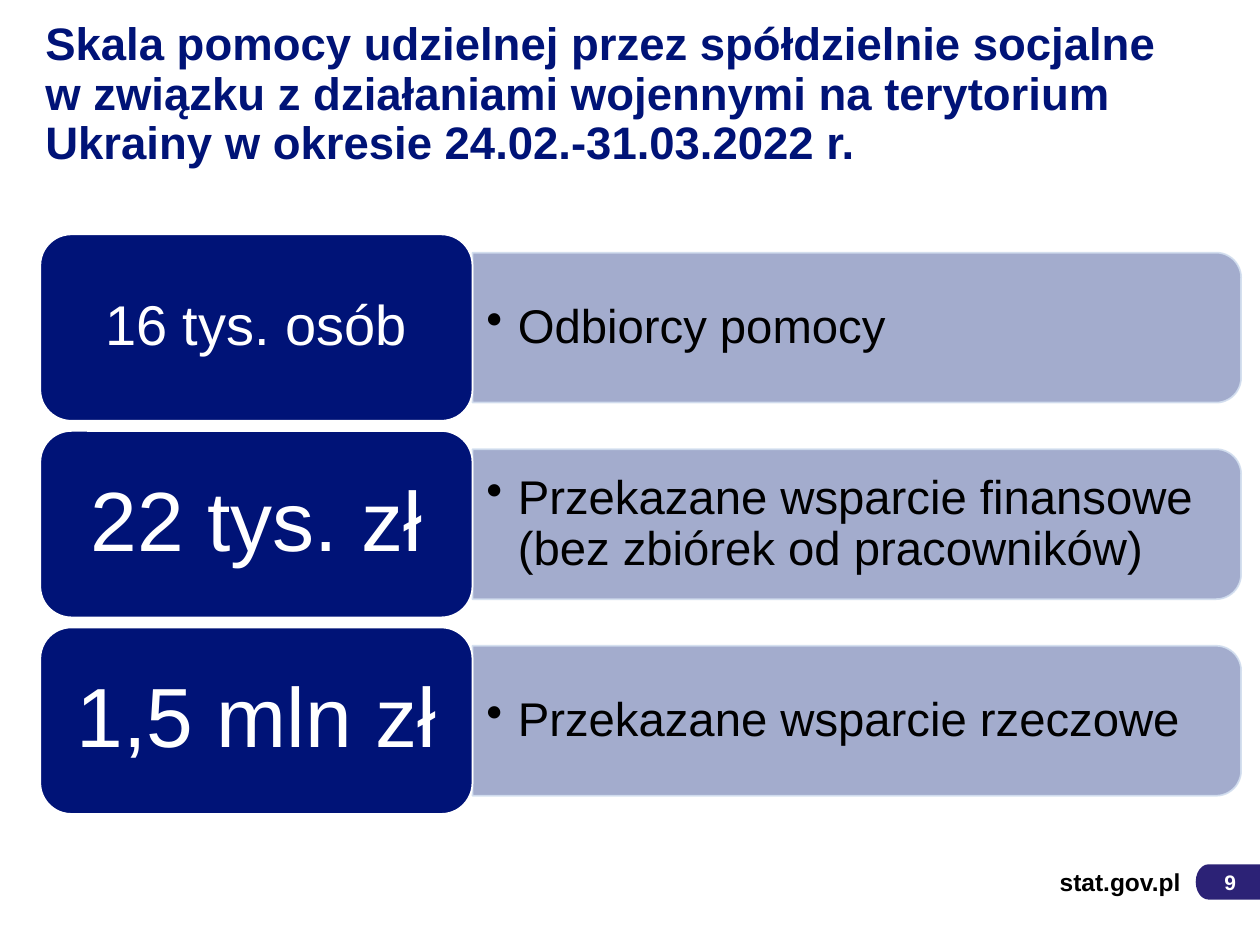
from dataclasses import dataclass

from lxml import etree
from pptx import Presentation
from pptx import util as u
from pptx.dml.color import RGBColor
from pptx.enum import shapes, text
from pptx.oxml.ns import qn

COLORS = {
    "navy": "001377",
    "bar": "99A4C8",
    "bar_line": "D2DEEF",
    "badge": "2C2276",
    "white": "FFFFFF",
    "black": "000000",
}
FONT = "Arial"
ROW_TOP, ROW_PITCH = 1.86, 1.56
LABEL_LEFT, LABEL_WIDTH, LABEL_HEIGHT = 0.32, 3.43, 1.48
BAR_LENGTH, BAR_HEIGHT = 6.1, 1.19


@dataclass
class Row:
    amount: str
    size: int
    inset: float
    description: str


ROWS = [
    Row("16 tys. osób", 32, 0.13, "Odbiorcy pomocy"),
    Row("22 tys. zł", 48, 0.2, "Przekazane wsparcie finansowe (bez zbiórek od pracowników)"),
    Row("1,5 mln zł", 48, 0.2, "Przekazane wsparcie rzeczowe"),
]


def rgb(name: str) -> RGBColor:
    return RGBColor.from_string(COLORS[name])


def add_shape(page, kind, left: float, top: float, width: float, height: float,
              fill: str, line: str | None = None):
    shape = page.shapes.add_shape(
        kind, u.Inches(left), u.Inches(top), u.Inches(width), u.Inches(height))
    shape.shadow.inherit = False
    shape.fill.solid()
    shape.fill.fore_color.rgb = rgb(fill)
    if line:
        shape.line.color.rgb = rgb(line)
        shape.line.width = u.Pt(1)
    else:
        shape.line.fill.background()
    return shape


def add_box(page, left: float, top: float, width: float, height: float):
    return page.shapes.add_textbox(
        u.Inches(left), u.Inches(top), u.Inches(width), u.Inches(height))


def write(box, lines: list[str], size: int, color: str, insets: tuple,
          align=text.PP_ALIGN.LEFT, anchor=text.MSO_ANCHOR.MIDDLE,
          bold: bool = False, spacing: float = 1.0, bullet: bool = False) -> None:
    """Fill a shape with one paragraph; insets run left, top, right, bottom."""
    frame = box.text_frame
    frame.word_wrap = True
    frame.vertical_anchor = anchor
    (frame.margin_left, frame.margin_top,
     frame.margin_right, frame.margin_bottom) = map(u.Inches, insets)
    para = frame.paragraphs[0]
    para.alignment = align
    para.line_spacing = spacing
    if bullet:
        properties = para._p.get_or_add_pPr()
        properties.set("marL", str(u.Inches(0.25)))
        properties.set("indent", str(u.Inches(-0.25)))
        etree.SubElement(properties, qn("a:buChar")).set("char", "•")
    for index, line in enumerate(lines):
        if index:
            para.add_line_break()
        span = para.add_run()
        span.text = line
        span.font.name = FONT
        span.font.size = u.Pt(size)
        span.font.bold = bold
        span.font.color.rgb = rgb(color)


def set_opacity(color_format_parent, percent: int) -> None:
    for color in color_format_parent.iter(qn("a:srgbClr")):
        etree.SubElement(color, qn("a:alpha")).set("val", str(percent * 1000))


def add_row(page, row: Row, top: float) -> None:
    bar_left = LABEL_LEFT + LABEL_WIDTH
    middle = top + LABEL_HEIGHT / 2
    # The bar stands upright and is turned a quarter, so its round end faces right.
    bar = add_shape(page, shapes.MSO_SHAPE.ROUND_2_SAME_RECTANGLE,
                    bar_left + (BAR_LENGTH - BAR_HEIGHT) / 2, middle - BAR_LENGTH / 2,
                    BAR_HEIGHT, BAR_LENGTH, "bar", "bar_line")
    bar.rotation = 90
    set_opacity(bar._element.spPr, 90)
    box = add_box(page, bar_left, middle - 0.53, 6.04, 1.07)
    write(box, [row.description], 27, "black", (0.11, 0.06, 0.11, 0.06),
          spacing=0.9, bullet=True)
    label = add_shape(page, shapes.MSO_SHAPE.ROUNDED_RECTANGLE, LABEL_LEFT, top,
                      LABEL_WIDTH, LABEL_HEIGHT, "navy", "white")
    write(label, [row.amount], row.size, "white",
          (row.inset, row.inset / 2, row.inset, row.inset / 2),
          align=text.PP_ALIGN.CENTER, spacing=0.9)


def add_footer(page) -> None:
    badge = add_shape(page, shapes.MSO_SHAPE.FLOWCHART_TERMINATOR,
                      9.49, 6.86, 0.63, 0.28, "badge")
    write(badge, ["9"], 12, "white", (0.04, 0.05, 0.28, 0.05),
          align=text.PP_ALIGN.RIGHT, bold=True)
    site = add_box(page, 8.19, 6.83, 1.18, 0.34)
    write(site, ["stat.gov.pl"], 14, "black", (0, 0.05, 0, 0.05),
          align=text.PP_ALIGN.RIGHT, bold=True)


def main() -> None:
    deck = Presentation()
    deck.slide_width, deck.slide_height = u.Inches(10), u.Inches(7.5)
    page = deck.slides.add_slide(deck.slide_layouts[6])
    add_footer(page)
    for index, row in enumerate(ROWS):
        add_row(page, row, ROW_TOP + index * ROW_PITCH)
    title = add_box(page, 0.36, 0.6, 9.45, 0.79)
    write(title, ["Skala pomocy udzielnej przez spółdzielnie socjalne",
                  "w związku z działaniami wojennymi na terytorium "
                  "Ukrainy w okresie 24.02.-31.03.2022 r."],
          26, "navy", (0, 0.05, 0, 0.05), anchor=text.MSO_ANCHOR.BOTTOM,
          bold=True, spacing=0.9)
    deck.save("out.pptx")


if __name__ == "__main__":
    main()
